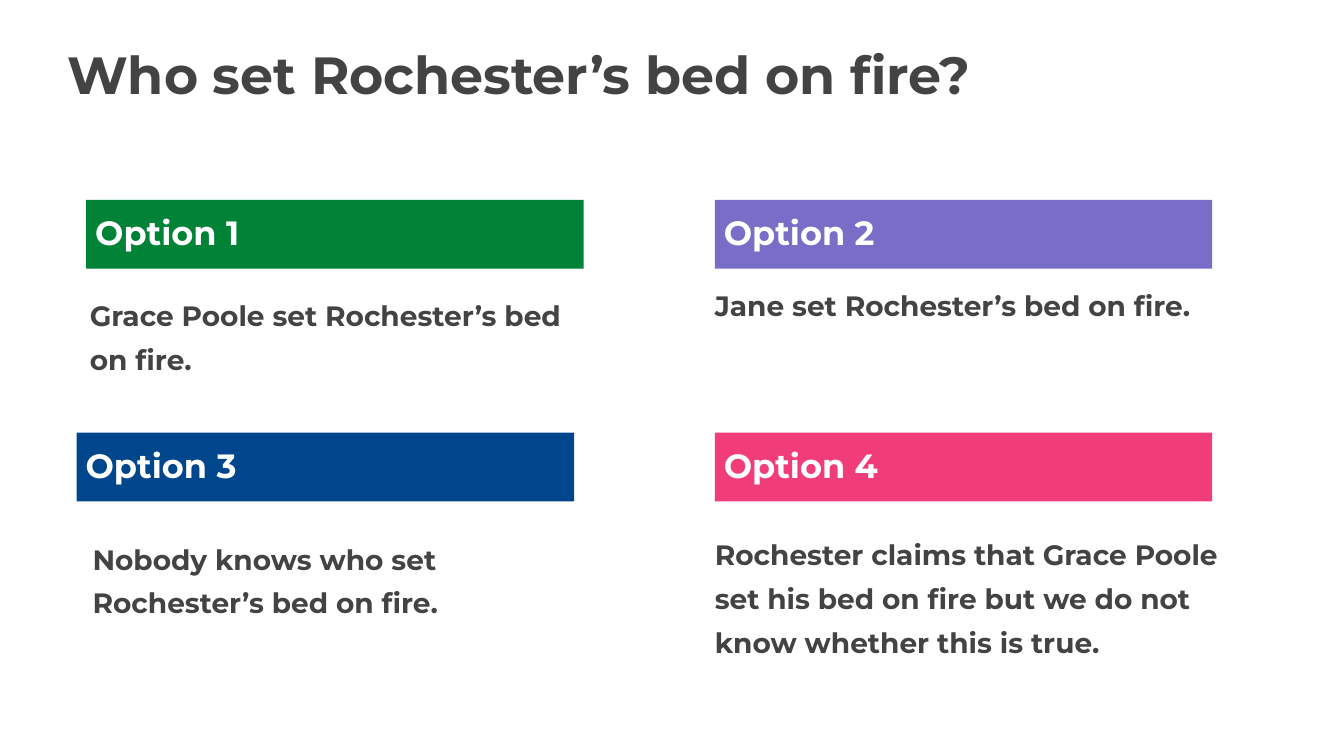
from dataclasses import dataclass

from pptx import Presentation
from pptx.dml.color import RGBColor
from pptx.enum.shapes import MSO_SHAPE
from pptx.enum.text import MSO_ANCHOR, PP_ALIGN
from pptx.util import Cm, Pt

RECTANGLE = MSO_SHAPE.RECTANGLE
TOP = MSO_ANCHOR.TOP
LEFT = PP_ALIGN.LEFT

FONT = "Montserrat"
DARK = "434343"
WHITE = "FFFFFF"
BLANK_LAYOUT = 6

BAR_WIDTH = 9.4
BAR_HEIGHT = 1.3
ROW_TOPS = (3.78, 8.18)
RIGHT_COLUMN = 13.51


@dataclass
class Area:
    left: float
    top: float
    width: float
    height: float

    def lengths(self) -> tuple:
        return Cm(self.left), Cm(self.top), Cm(self.width), Cm(self.height)


@dataclass
class Option:
    number: int
    bar_left: float
    color: str
    answer: str
    answer_area: Area
    indent: float = 0
    line_spacing: float = 1.3


OPTIONS = (
    Option(1, 1.63, "008237", "Grace Poole set Rochester’s bed on fire.",
           Area(1.7, 5.46, 9.22, 1.07)),
    Option(2, RIGHT_COLUMN, "786EC8", "Jane set Rochester’s bed on fire.",
           Area(RIGHT_COLUMN, 5.46, BAR_WIDTH, BAR_HEIGHT), line_spacing=1),
    Option(3, 1.45, "00468C", "Nobody knows who set Rochester’s bed on fire.",
           Area(1.5, 10.06, 9.22, 1.68), indent=0.25),
    Option(4, RIGHT_COLUMN, "F03C78",
           "Rochester claims that Grace Poole set his bed on fire "
           "but we do not know whether this is true.",
           Area(RIGHT_COLUMN, 9.98, 10.42, 1.47)),
)


def rgb(color: str) -> RGBColor:
    return RGBColor.from_string(color)


def write(shape, text: str, *, size: float, color: str = DARK,
          indent: float = 0, line_spacing: float = 1) -> None:
    frame = shape.text_frame
    frame.word_wrap = True
    frame.vertical_anchor = TOP
    frame.margin_left = Cm(indent)
    frame.margin_top = frame.margin_right = frame.margin_bottom = 0
    para = frame.paragraphs[0]
    para.alignment = LEFT
    para.line_spacing = float(line_spacing)
    span = para.add_run()
    span.text = text
    span.font.name = FONT
    span.font.size = Pt(size)
    span.font.bold = True
    span.font.color.rgb = rgb(color)


def draw_option(page, option: Option) -> None:
    row_top = ROW_TOPS[(option.number - 1) // 2]
    bar_area = Area(option.bar_left, row_top, BAR_WIDTH, BAR_HEIGHT)
    bar = page.shapes.add_shape(RECTANGLE, *bar_area.lengths())
    bar.shadow.inherit = False
    bar.fill.solid()
    bar.fill.fore_color.rgb = rgb(option.color)
    bar.line.fill.background()
    write(bar, f"Option {option.number}", size=18, color=WHITE,
          indent=0.17, line_spacing=1.3)
    box = page.shapes.add_textbox(*option.answer_area.lengths())
    write(box, option.answer, size=15, indent=option.indent,
          line_spacing=option.line_spacing)


def main() -> None:
    deck = Presentation()
    deck.slide_width = Cm(25.4)
    deck.slide_height = Cm(14.29)
    page = deck.slides.add_slide(deck.slide_layouts[BLANK_LAYOUT])
    title = page.shapes.add_textbox(*Area(1.27, 0.79, 22.02, 2.26).lengths())
    write(title, "Who set Rochester’s bed on fire?", size=28)
    for option in OPTIONS:
        draw_option(page, option)
    deck.save("out.pptx")


if __name__ == "__main__":
    main()
